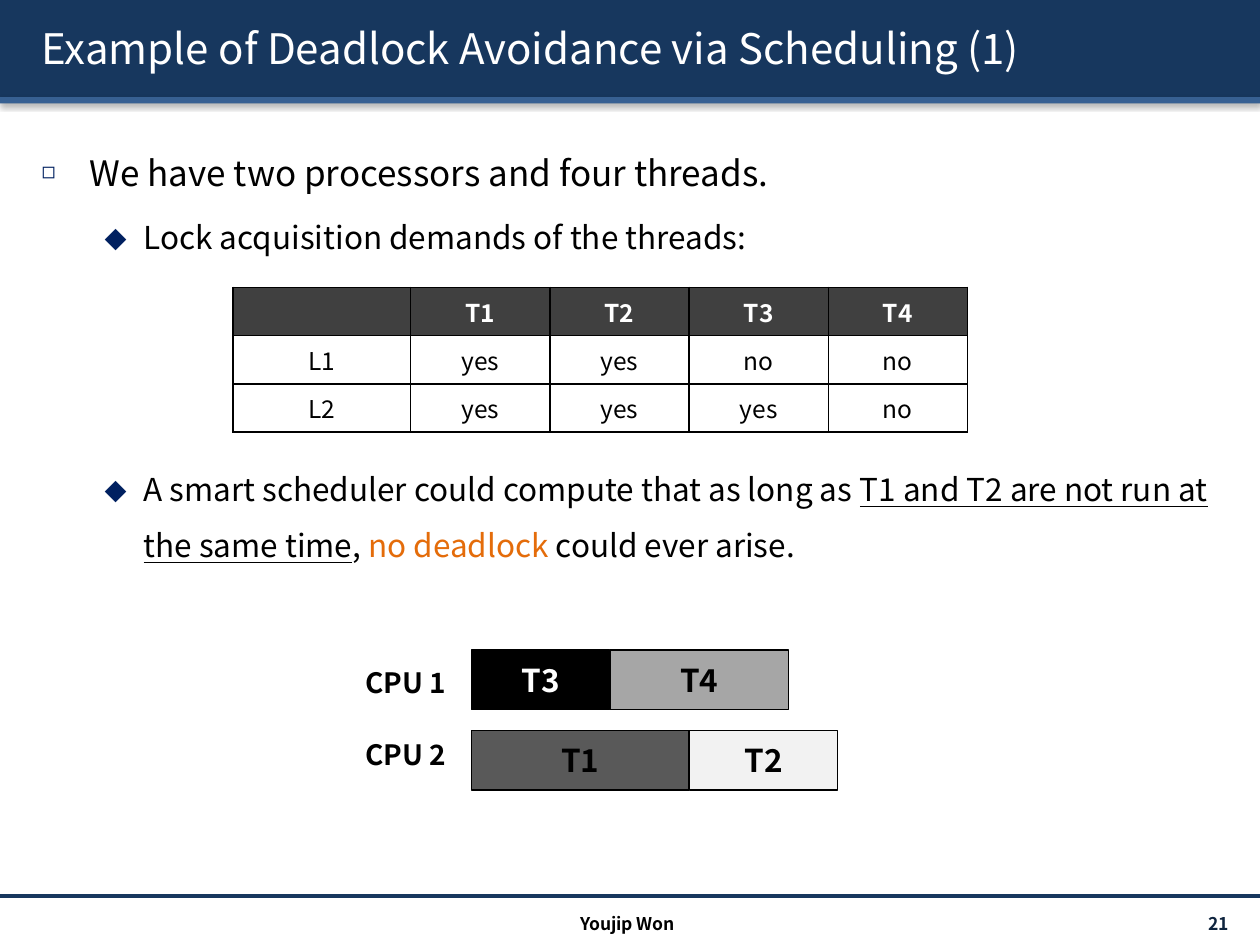
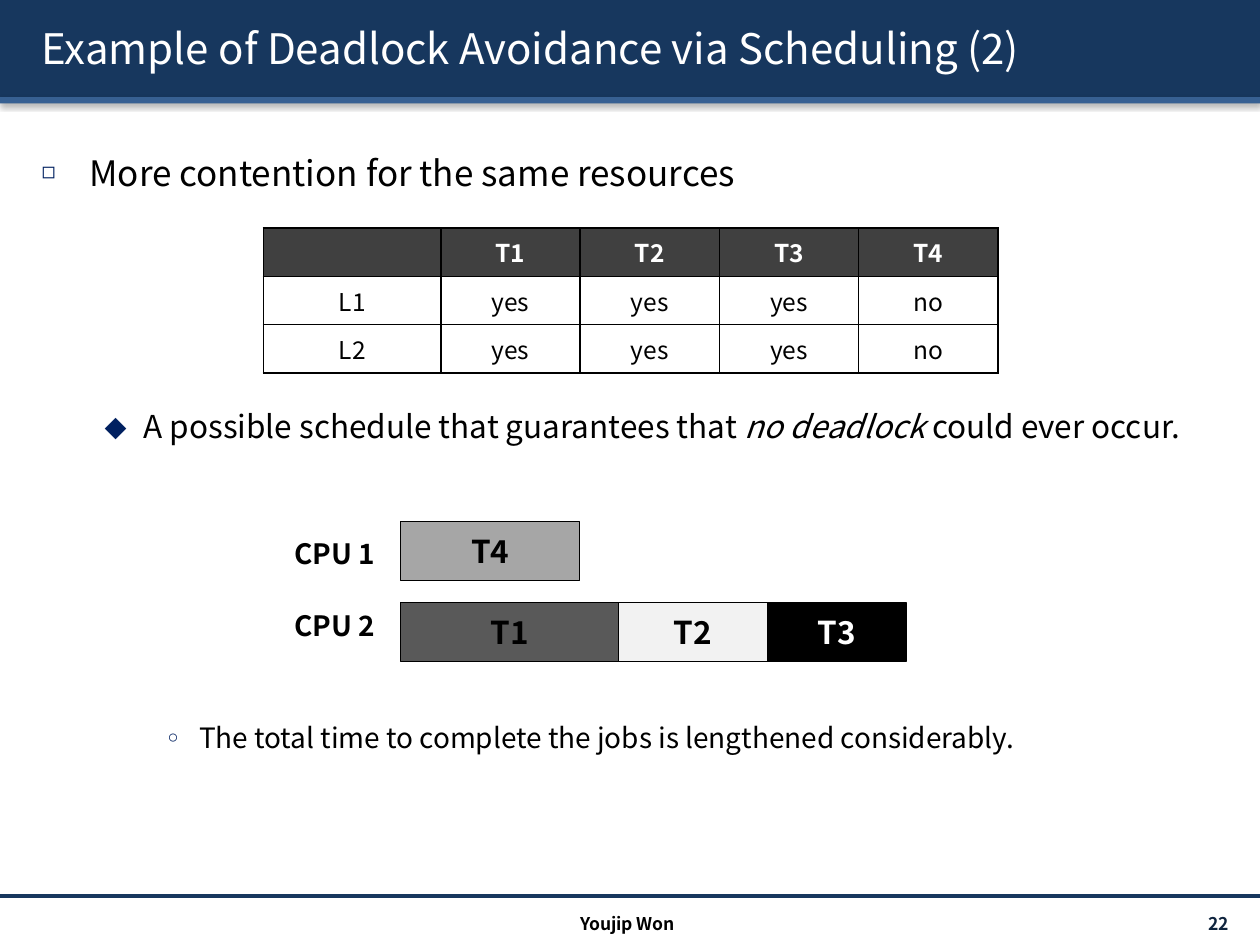
from lxml import etree
from pptx import Presentation
from pptx import util as u
from pptx.dml.color import RGBColor
from pptx.enum import shapes, text
from pptx.oxml import parse_xml
from pptx.oxml.ns import nsdecls, qn

FONT = "Noto Sans CJK KR"
COLORS = {
    "navy": "17375E", "blue": "376092", "bullet": "002060", "page": "0F243E",
    "orange": "E46C0A", "header": "404040", "black": "000000", "white": "FFFFFF",
}
SHADOW = (
    f'<a:effectLst {nsdecls("a")}><a:outerShdw blurRad="{{blur}}" dist="{{dist}}" '
    'dir="{angle}" algn="t" rotWithShape="0"><a:srgbClr val="000000">'
    '<a:alpha val="{alpha}"/></a:srgbClr></a:outerShdw></a:effectLst>'
)

# Bullet levels: character, size %, left margin, hanging indent, text size, line pitch
LEVELS = [
    ("◻", 65, 0.38, 0.38, 20, 35.5),
    ("⬥", 100, 0.81, 0.31, 18, 32),
    ("○", 65, 1.25, 0.25, 16, 28.5),
]
SPACE_BEFORE = 4
ROW_PITCH = 36  # one empty list row, in points

# Threads: bar length, fill, text colour
THREADS = {
    "T1": (1.73, "595959", "black"),
    "T2": (1.18, "F2F2F2", "black"),
    "T3": (1.1, "000000", "white"),
    "T4": (1.42, "A6A6A6", "black"),
}

# List entries: level, empty rows above, runs (text, style)
SLIDES = [
    {
        "page": 21,
        "title": "Example of Deadlock Avoidance via Scheduling (1)",
        "list": [
            (0, 0, [("We have two processors and four threads.", "")]),
            (1, 0, [("Lock acquisition demands of the threads:", "")]),
            (1, 3, [("A smart scheduler could compute that as long as ", ""),
                    ("T1 and T2 are not run at the same time", "underline"),
                    (", ", ""), ("no deadlock ", "orange"),
                    ("could ever arise.", "")]),
        ],
        "table_at": (1.85, 2.28),
        "demands": [["L1", "yes", "yes", "no", "no"],
                    ["L2", "yes", "yes", "yes", "no"]],
        "schedule_at": (2.8, 5.16),
        "schedule": [["T3", "T4"], ["T1", "T2"]],
    },
    {
        "page": 22,
        "title": "Example of Deadlock Avoidance via Scheduling (2)",
        "list": [
            (0, 0, [("More contention for the same resources", "")]),
            (1, 3, [("A possible schedule that guarantees that ", ""),
                    ("no deadlock ", "italic"), ("could ever occur.", "")]),
            (2, 4, [("The total time to complete the jobs is lengthened considerably.", "")]),
        ],
        "table_at": (2.09, 1.81),
        "demands": [["L1", "yes", "yes", "yes", "no"],
                    ["L2", "yes", "yes", "yes", "no"]],
        "schedule_at": (2.24, 4.14),
        "schedule": [["T4"], ["T1", "T2", "T3"]],
    },
]


def style(font, size, color, bold=False):
    font.name, font.size, font.bold = FONT, u.Pt(size), bold
    font.color.rgb = RGBColor.from_string(COLORS[color])


def add_label(slide, words, left, top, width, height, size, color, align, wrap=True):
    frame = slide.shapes.add_textbox(
        *map(u.Inches, (left, top, width, height))).text_frame
    frame.word_wrap = wrap
    frame.vertical_anchor = text.MSO_ANCHOR.MIDDLE
    line = frame.paragraphs[0]
    line.text, line.alignment = words, align
    style(line.font, size, color, bold=True)


prs = Presentation()
prs.slide_width, prs.slide_height = u.Inches(10), u.Inches(7.5)
layout = prs.slide_layouts[1]

for number, content in enumerate(SLIDES):
    slide = prs.slides.add_slide(layout)

    # Title bands and footer rule, moved once into the shared layout
    if number == 0:
        shared = []
        for top, height, color in ((0, 0.77, "navy"), (0.77, 0.05, "blue")):
            band = slide.shapes.add_shape(
                shapes.MSO_SHAPE.RECTANGLE, 0, u.Inches(top), u.Inches(10), u.Inches(height))
            band.fill.solid()
            band.fill.fore_color.rgb = RGBColor.from_string(COLORS[color])
            band.line.fill.background()
            band.element.spPr.append(parse_xml(SHADOW.format(
                blur=u.Pt(3.1), dist=u.Pt(1.6), angle=5400000, alpha=38000)))
            shared.append(band)
        rule = slide.shapes.add_connector(
            shapes.MSO_CONNECTOR.STRAIGHT, 0, u.Inches(7.11), u.Inches(10), u.Inches(7.11))
        rule.line.color.rgb = RGBColor.from_string(COLORS["navy"])
        rule.line.width = u.Pt(2)
        etree.SubElement(rule.element.spPr, qn("a:effectLst"))
        shared.append(rule)
        for position, part in enumerate(shared, start=2):
            layout.shapes.element.insert(position, part.element)

    # Title
    title = slide.shapes.title
    title.left, title.top, title.width, title.height = map(u.Inches, (0.23, 0.06, 9.61, 0.64))
    title.text_frame.auto_size = text.MSO_AUTO_SIZE.NONE
    title.text_frame.vertical_anchor = text.MSO_ANCHOR.MIDDLE
    heading = title.text_frame.paragraphs[0]
    heading.alignment = text.PP_ALIGN.LEFT
    heading_run = heading.add_run()
    heading_run.text = content["title"]
    style(heading_run.font, 24, "white")
    heading_run.font.fill._xPr.find(qn("a:solidFill")).addnext(parse_xml(SHADOW.format(
        blur=u.Pt(3), dist=u.Pt(3), angle=2700000, alpha=43000)))

    # Bullet list
    body = slide.placeholders[1]
    body.left, body.top, body.width, body.height = map(u.Inches, (0.23, 0.96, 9.61, 6.02))
    body.text_frame.auto_size = text.MSO_AUTO_SIZE.NONE
    body.text_frame.margin_top = u.Inches(0.08)
    for index, (level, empty_rows, runs) in enumerate(content["list"]):
        item = body.text_frame.paragraphs[0] if index == 0 else body.text_frame.add_paragraph()
        char, percent, margin, hanging, size, pitch = LEVELS[level]
        item.level = level
        props = item._p.get_or_add_pPr()
        props.set("marL", str(u.Inches(margin)))
        props.set("indent", str(-u.Inches(hanging)))
        bullet_color = etree.SubElement(props, qn("a:buClr"))
        etree.SubElement(bullet_color, qn("a:srgbClr"), val=COLORS["bullet"])
        etree.SubElement(props, qn("a:buSzPct"), val=str(percent * 1000))
        etree.SubElement(props, qn("a:buChar"), char=char)
        item.line_spacing = u.Pt(pitch)
        item.space_before = u.Pt(SPACE_BEFORE + empty_rows * ROW_PITCH if index else 0)
        style(item.font, size, "black")
        for words, look in runs:
            run = item.add_run()
            run.text = words
            if look == "underline":
                run.font.underline = True
            elif look == "italic":
                run.font.italic = True
            elif look:
                run.font.color.rgb = RGBColor.from_string(COLORS[look])

    # Footer
    add_label(slide, str(content["page"]), 8.68, 7.21, 1.17, 0.24, 10, "page",
              text.PP_ALIGN.RIGHT)
    add_label(slide, "Youjip Won", 3.32, 7.21, 3.32, 0.24, 10, "black", text.PP_ALIGN.CENTER)

    # Lock demand table
    rows = [["", *THREADS], *content["demands"]]
    left, top = content["table_at"]
    demands = slide.shapes.add_table(
        len(rows), len(rows[0]), *map(u.Inches, (left, top, 5.83, 1.15))).table
    demands.first_row = demands.horz_banding = False
    for c, column in enumerate(demands.columns):
        column.width = u.Inches(4.42 / len(THREADS)) if c else u.Inches(1.41)
    for r, row in enumerate(rows):
        for c, words in enumerate(row):
            cell = demands.cell(r, c)
            cell.margin_top = cell.margin_bottom = 0
            cell.vertical_anchor = text.MSO_ANCHOR.MIDDLE
            line = cell.text_frame.paragraphs[0]
            line.text, line.alignment = words, text.PP_ALIGN.CENTER
            style(line.font, 14, "black" if r else "white", bold=r == 0)
            cell_props = cell._tc.get_or_add_tcPr()
            for side in ("lnL", "lnR", "lnT", "lnB"):
                border = etree.SubElement(cell_props, qn(f"a:{side}"), w=str(u.Pt(1)))
                border_fill = etree.SubElement(border, qn("a:solidFill"))
                etree.SubElement(border_fill, qn("a:srgbClr"), val=COLORS["black"])
            cell.fill.solid()
            cell.fill.fore_color.rgb = RGBColor.from_string(COLORS["white" if r else "header"])

    # CPU schedule
    left, top = content["schedule_at"]
    for cpu, threads in enumerate(content["schedule"]):
        add_label(slide, f"CPU {cpu + 1}", left, top + 0.07 + cpu * 0.57, 0.86, 0.37,
                  16, "black", text.PP_ALIGN.LEFT, wrap=False)
        start = left + 0.94
        for thread in threads:
            length, fill, color = THREADS[thread]
            bar = slide.shapes.add_shape(
                shapes.MSO_SHAPE.RECTANGLE,
                *map(u.Inches, (start, top + cpu * 0.64, length, 0.47)))
            bar.shadow.inherit = False
            bar.fill.solid()
            bar.fill.fore_color.rgb = RGBColor.from_string(fill)
            bar.line.color.rgb = RGBColor.from_string(COLORS["black"])
            bar.line.width = u.Pt(0.75)
            bar.text_frame.vertical_anchor = text.MSO_ANCHOR.MIDDLE
            line = bar.text_frame.paragraphs[0]
            line.text, line.alignment = thread, text.PP_ALIGN.CENTER
            style(line.font, 18, color, bold=True)
            start += length

prs.save("out.pptx")
